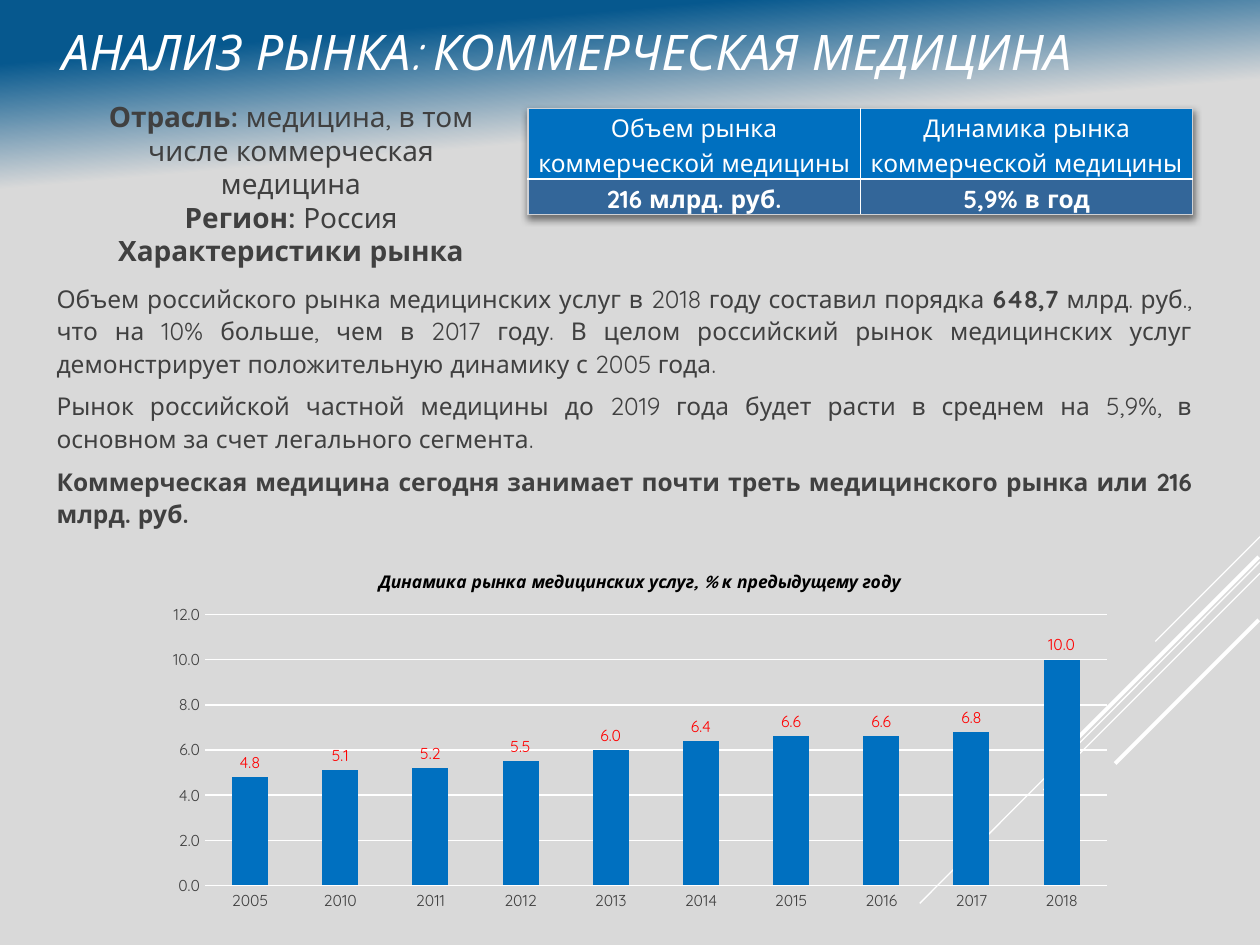
from lxml import etree
from pptx import Presentation
from pptx.chart.data import CategoryChartData
from pptx.dml.color import RGBColor
from pptx.enum.chart import XL_CHART_TYPE, XL_LABEL_POSITION, XL_TICK_MARK
from pptx.enum.shapes import MSO_CONNECTOR
from pptx.enum.text import MSO_ANCHOR, MSO_AUTO_SIZE, PP_ALIGN
from pptx.oxml import parse_xml
from pptx.oxml.ns import nsdecls, qn
from pptx.util import Pt

LEFT, CENTER, JUSTIFY = PP_ALIGN.LEFT, PP_ALIGN.CENTER, PP_ALIGN.JUSTIFY
TOP, MIDDLE = MSO_ANCHOR.TOP, MSO_ANCHOR.MIDDLE
NO_FIT, GROW = MSO_AUTO_SIZE.NONE, MSO_AUTO_SIZE.SHAPE_TO_FIT_TEXT
COLUMN = XL_CHART_TYPE.COLUMN_CLUSTERED
OUTSIDE_END = XL_LABEL_POSITION.OUTSIDE_END
NO_TICK = XL_TICK_MARK.NONE
STRAIGHT = MSO_CONNECTOR.STRAIGHT

THEME = {
    "font": "Quicksand",
    "white": "FFFFFF", "text": "404040", "black": "000000", "label": "FF0000",
    "accent": "0070C0", "row": "336699", "border": "CFD1D5",
    "bg": [("06588E", 0.06), ("D9D9D9", 0.18)],
    "title": 28, "lead": 16, "body": 14, "chart_title": 10, "axis": 9,
}

TITLE = [[("АНАЛИЗ РЫНКА: КОММЕРЧЕСКАЯ МЕДИЦИНА", False)]]
SUMMARY = [
    [("Отрасль:", True), (" медицина, в том числе коммерческая медицина", False)],
    [("Регион:", True), (" Россия", False)],
    [("Характеристики рынка", True)],
]
BODY = [
    [("Объем российского рынка медицинских услуг в 2018 году составил порядка ", False),
     ("648,7", True),
     (" млрд. руб., что на 10% больше, чем в 2017 году. В целом российский рынок "
      "медицинских услуг демонстрирует положительную динамику с 2005 года.", False)],
    [("Рынок российской частной медицины до 2019 года будет расти в среднем на 5,9%, "
      "в основном за счет легального сегмента. ", False)],
    [("Коммерческая медицина сегодня занимает почти треть медицинского рынка "
      "или 216 млрд. руб.", True)],
]
TABLE = [
    ["Объем рынка коммерческой медицины", "Динамика рынка коммерческой медицины"],
    ["216 млрд. руб.", "5,9% в год"],
]
ROW_HEIGHTS = [40.5, 19]
CHART_TITLE = "Динамика рынка медицинских услуг, % к предыдущему году"
GROWTH = {"2005": 4.8, "2010": 5.1, "2011": 5.2, "2012": 5.5, "2013": 6.0,
          "2014": 6.4, "2015": 6.6, "2016": 6.6, "2017": 6.8, "2018": 10.0}
RAYS = [
    (720, 306.7, 660.2, 366.5, 0.75),
    (720, 321.1, 525.6, 516.2, 0.75),
    (720, 327.6, 596.2, 451.4, 0.75),
    (719.3, 318.2, 606.2, 431.3, 2.25),
    (719.3, 354.2, 637.2, 436.3, 2.25),
]


def rgb(name):
    return RGBColor.from_string(THEME[name])


def style(font, size, color, bold=False, italic=False):
    font.name, font.size, font.bold, font.italic = THEME["font"], Pt(size), bold, italic
    font.color.rgb = rgb(color)


def write(tf, paragraphs, size, color="text", align=LEFT, anchor=TOP, fit=NO_FIT,
          spacing=1.0, before=0, after=0, italic=False):
    tf.word_wrap = True
    tf.auto_size = fit
    tf.vertical_anchor = anchor
    for i, runs in enumerate(paragraphs):
        p = tf.add_paragraph() if i else tf.paragraphs[0]
        p.alignment, p.line_spacing = align, spacing
        p.space_before, p.space_after = Pt(before), Pt(after)
        for text, bold in runs:
            r = p.add_run()
            r.text = text
            style(r.font, size, color, bold, italic)


def add_rays(s):
    for x1, y1, x2, y2, width in RAYS:
        line = s.shapes.add_connector(STRAIGHT, Pt(x1), Pt(y1), Pt(x2), Pt(y2))
        line.line.color.rgb = rgb("white")
        line.line.width = Pt(width)
        etree.SubElement(line._element.spPr, qn("a:effectLst"))


def add_border(cell, side):
    cell._tc.get_or_add_tcPr().append(parse_xml(
        f'<a:{side} {nsdecls("a")} w="9525"><a:solidFill><a:srgbClr val="{THEME["border"]}">'
        f'<a:alpha val="60000"/></a:srgbClr></a:solidFill></a:{side}>'))


def add_market_table(s):
    rows, cols = len(TABLE), len(TABLE[0])
    table = s.shapes.add_table(rows, cols, Pt(301.7), Pt(61.9), Pt(380), Pt(sum(ROW_HEIGHTS))).table
    table.horz_banding = False
    table._tbl.tblPr.insert(0, parse_xml(
        f'<a:effectLst {nsdecls("a")}><a:outerShdw blurRad="50800" dist="25400" dir="5400000">'
        '<a:srgbClr val="000000"><a:alpha val="50000"/></a:srgbClr></a:outerShdw></a:effectLst>'))
    for i, texts in enumerate(TABLE):
        table.rows[i].height = Pt(ROW_HEIGHTS[i])
        for j, text in enumerate(texts):
            cell = table.cell(i, j)
            cell.margin_left = cell.margin_right = Pt(5)
            cell.margin_top = cell.margin_bottom = 0
            edges = {"lnL": j == 0, "lnR": j == cols - 1, "lnT": i == 0, "lnB": i == rows - 1}
            for side, outer in edges.items():
                if outer:
                    add_border(cell, side)
            cell.fill.solid()
            cell.fill.fore_color.rgb = rgb("row" if i else "accent")
            gap = 6 if i else 0
            write(cell.text_frame, [[(text, i > 0)]], THEME["body"], "white", CENTER,
                  spacing=1.15, before=gap, after=gap)


def add_growth_chart(s):
    data = CategoryChartData(number_format="#,##0.0")
    data.categories = list(GROWTH)
    data.add_series("Series 1", list(GROWTH.values()))
    chart = s.shapes.add_chart(COLUMN, Pt(87.8), Pt(315.4), Pt(555.8), Pt(208.8), data).chart
    chart.has_legend = False
    style(chart.font, THEME["chart_title"], "white")
    chart.has_title = True
    chart.chart_title.include_in_layout = False
    p = chart.chart_title.text_frame.paragraphs[0]
    r = p.add_run()
    r.text = CHART_TITLE
    style(r.font, THEME["chart_title"], "black", True, True)

    for axis in (chart.category_axis, chart.value_axis):
        axis.major_tick_mark = axis.minor_tick_mark = NO_TICK
        style(axis.tick_labels.font, THEME["axis"], "text")
    value_axis = chart.value_axis
    value_axis.minimum_scale, value_axis.maximum_scale, value_axis.major_unit = 0, 12, 2
    value_axis.tick_labels.number_format = "#,##0.0"
    value_axis.tick_labels.number_format_is_linked = False
    value_axis.format.line.fill.background()
    for line in (chart.category_axis.format.line, value_axis.major_gridlines.format.line):
        line.color.rgb = rgb("white")
        line.width = Pt(0.75)

    plot = chart.plots[0]
    plot.gap_width, plot.vary_by_categories = 150, False
    fill = plot.series[0].format.fill
    fill.solid()
    fill.fore_color.rgb = rgb("accent")
    plot.has_data_labels = True
    labels = plot.data_labels
    labels.show_value, labels.position = True, OUTSIDE_END
    labels.number_format, labels.number_format_is_linked = "#,##0.0", False
    style(labels.font, THEME["axis"], "label")


def main():
    prs = Presentation()
    prs.slide_width, prs.slide_height = Pt(720), Pt(540)
    s = prs.slides.add_slide(prs.slide_layouts[5])
    fill = s.background.fill
    fill.gradient()
    fill.gradient_angle = 275
    for stop, (color, position) in zip(fill.gradient_stops, THEME["bg"]):
        stop.color.rgb = RGBColor.from_string(color)
        stop.position = position

    add_rays(s)
    add_market_table(s)
    sp = s.shapes.add_textbox(Pt(38.9), Pt(52.6), Pt(254.9), Pt(104.4))
    write(sp.text_frame, SUMMARY, THEME["lead"], align=CENTER, anchor=MIDDLE, fit=GROW)
    sp = s.shapes.add_textbox(Pt(25.2), Pt(157), Pt(663.1), Pt(149.8))
    write(sp.text_frame, BODY, THEME["body"], align=JUSTIFY, fit=GROW, spacing=1.1, before=6)
    add_growth_chart(s)

    title = s.shapes.title
    title.left, title.top, title.width, title.height = Pt(0), Pt(-2.2), Pt(720), Pt(62.6)
    title.text_frame.margin_left = Pt(35.3)
    write(title.text_frame, TITLE, THEME["title"], "white", anchor=MIDDLE, italic=True)
    prs.save("out.pptx")


if __name__ == "__main__":
    main()
